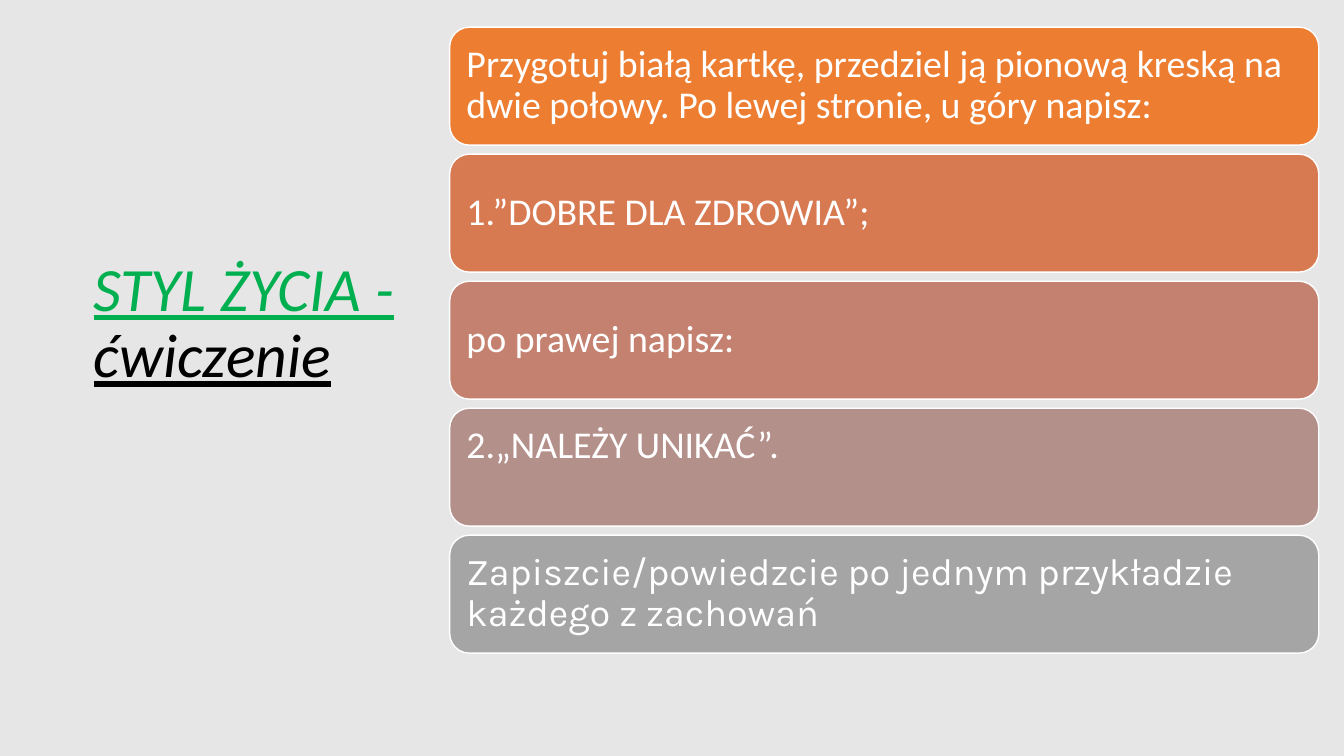
import pptx
import pptx.dml.color
import pptx.enum.shapes
import pptx.enum.text
import pptx.util
from pptx.util import Inches

STEP_LEFT, STEP_TOP = 4.46, 0.27
STEP_WIDTH, STEP_HEIGHT = 8.62, 1.17
STEP_PITCH = 1.26
INSET = 0.11
TEXT_LINE = 0.41

# Text, fill, font, extra space kept free below the text
STEPS = [
    ("Przygotuj białą kartkę, przedziel ją pionową kreską na dwie połowy. "
     "Po lewej stronie, u góry napisz:", "ED7D31", "Calibri", 0),
    ("1.”DOBRE DLA ZDROWIA”;", "D87A51", "Calibri", 0),
    ("po prawej napisz:", "C48170", "Calibri", 0),
    ("2.„NALEŻY UNIKAĆ”.", "B4908B", "Calibri", TEXT_LINE),
    ("Zapiszcie/powiedzcie po jednym przykładzie każdego z zachowań",
     "A5A5A5", "Karla", 0),
]


def color(value):
    return pptx.dml.color.RGBColor.from_string(value)


def format_paragraph(paragraph, font_name, size):
    paragraph.alignment = pptx.enum.text.PP_ALIGN.LEFT
    paragraph.line_spacing = 0.9
    paragraph.font.name = font_name
    paragraph.font.size = pptx.util.Pt(size)


def center_vertically(frame):
    frame.word_wrap = True
    frame.vertical_anchor = pptx.enum.text.MSO_ANCHOR.MIDDLE


def add_title(slide, parts):
    """Add the title from (text, colour) parts."""
    box = slide.shapes.add_textbox(
        Inches(0.83), Inches(1.21), Inches(3.77), Inches(4.02))
    center_vertically(box.text_frame)
    paragraph = box.text_frame.paragraphs[0]
    format_paragraph(paragraph, "Calibri", 44)
    paragraph.font.italic = True
    paragraph.font.underline = True
    for text, text_color in parts:
        run = paragraph.add_run()
        run.text = text
        run.font.color.rgb = color(text_color)


def add_step(slide, index, text, fill, font_name, space_below):
    shape = slide.shapes.add_shape(
        pptx.enum.shapes.MSO_SHAPE.ROUNDED_RECTANGLE,
        Inches(STEP_LEFT), Inches(STEP_TOP + index * STEP_PITCH),
        Inches(STEP_WIDTH), Inches(STEP_HEIGHT))
    shape.shadow.inherit = False
    shape.fill.solid()
    shape.fill.fore_color.rgb = color(fill)
    shape.line.color.rgb = color("FFFFFF")
    shape.line.width = pptx.util.Pt(1)

    frame = shape.text_frame
    center_vertically(frame)
    frame.margin_left = frame.margin_right = frame.margin_top = Inches(INSET)
    frame.margin_bottom = Inches(INSET + space_below)
    paragraph = frame.paragraphs[0]
    paragraph.text = text
    format_paragraph(paragraph, font_name, 27)
    paragraph.font.color.rgb = color("FFFFFF")


def main():
    presentation = pptx.Presentation()
    presentation.slide_width = Inches(13.33)
    presentation.slide_height = Inches(7.5)
    slide = presentation.slides.add_slide(presentation.slide_layouts[6])
    slide.background.fill.solid()
    slide.background.fill.fore_color.rgb = color("E7E6E6")

    add_title(slide, [("STYL ŻYCIA -", "00B050"), (" ćwiczenie", "000000")])
    for index, step in enumerate(STEPS):
        add_step(slide, index, *step)

    presentation.save("out.pptx")


if __name__ == "__main__":
    main()
